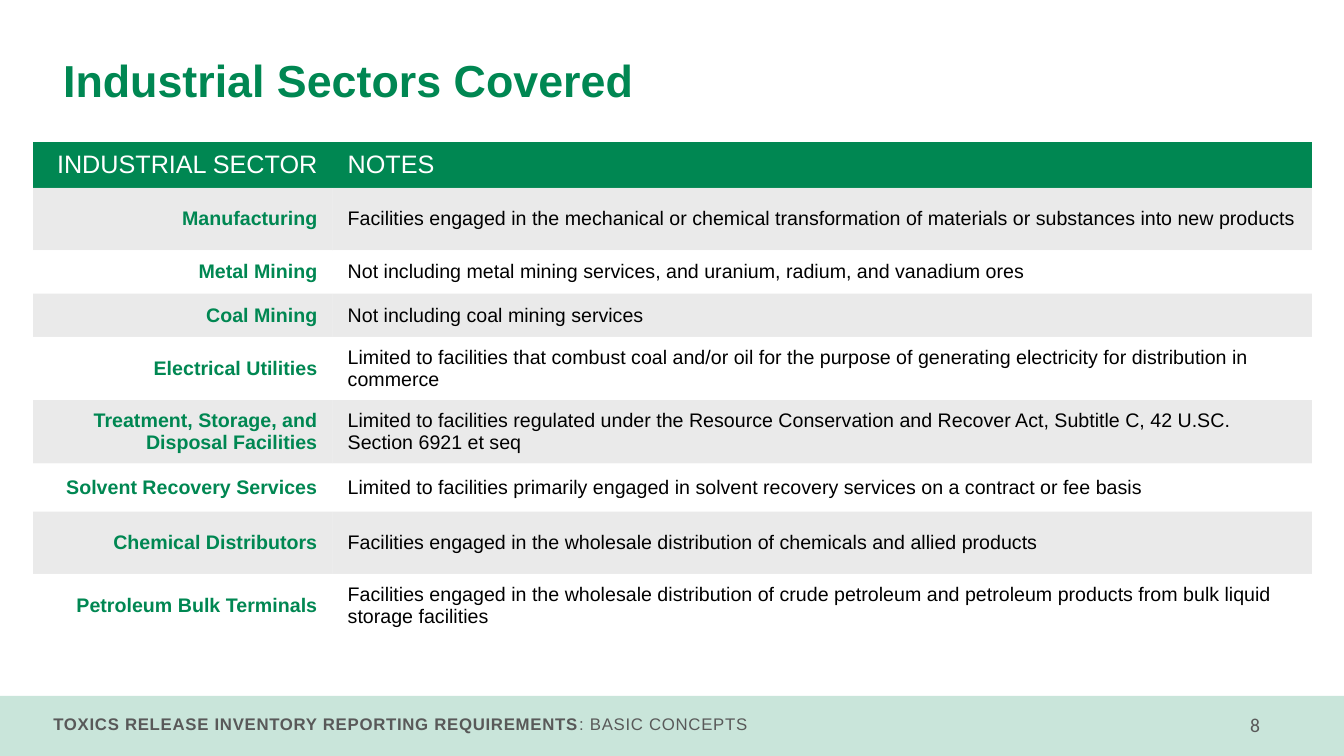
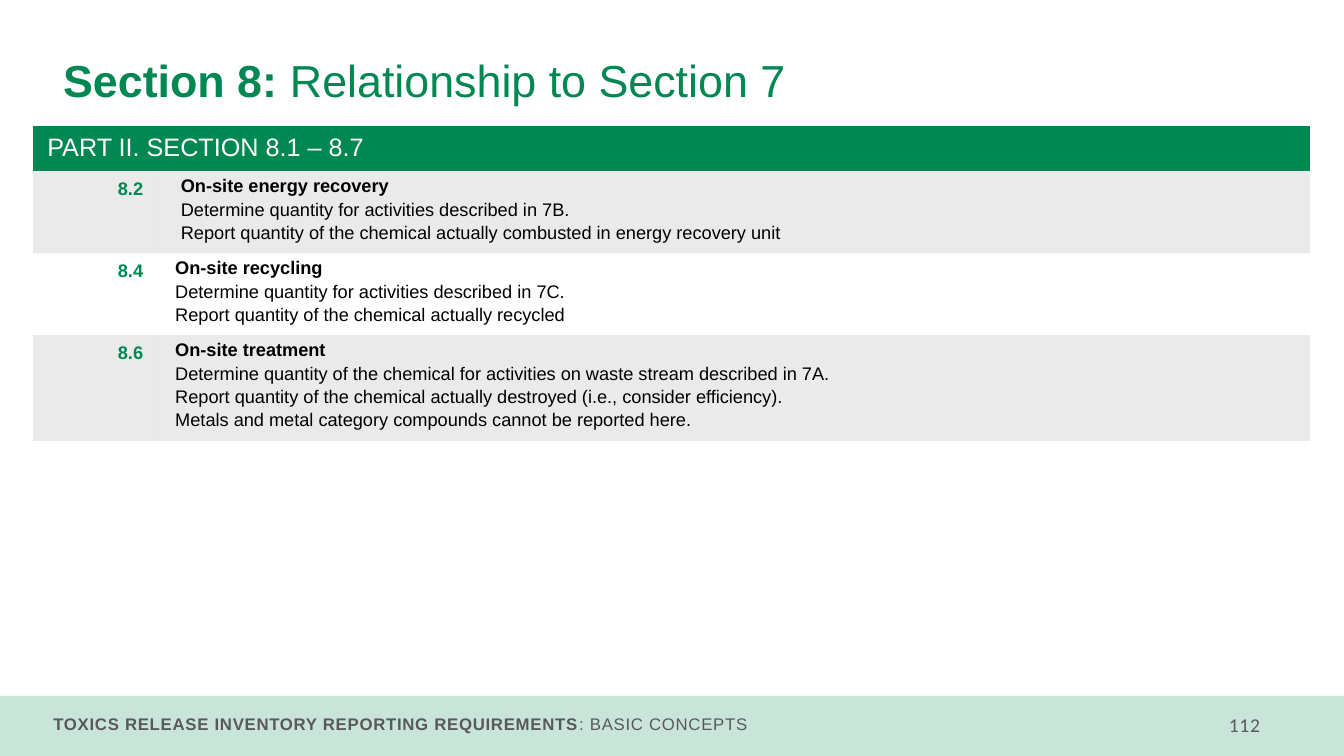
from dataclasses import dataclass

from lxml import etree
from pptx import Presentation
from pptx.dml.color import RGBColor
from pptx.enum.shapes import MSO_SHAPE
from pptx.enum.text import MSO_ANCHOR, PP_ALIGN
from pptx.oxml.ns import qn
from pptx.util import Pt

LEFT, RIGHT = PP_ALIGN.LEFT, PP_ALIGN.RIGHT
TOP, MIDDLE = MSO_ANCHOR.TOP, MSO_ANCHOR.MIDDLE
RECTANGLE = MSO_SHAPE.RECTANGLE

COLORS = {"green": "008752", "gray": "D9D9D9", "white": "FFFFFF",
          "black": "000000", "footer": "595959"}
SLIDE_W, SLIDE_H = 960, 540
PLAIN_TABLE_STYLE = "{2D5ABB26-0587-4C30-8999-92F81FD0307C}"
TABLE_LEFT = 23
WIDE_INSETS = (10.8, 5.76)
NARROW_INSETS = (7.2, 3.6)


@dataclass
class Run:
    text: str
    size: float
    color: str
    bold: bool = False
    font: str = "Arial"
    tracking: float = 0


@dataclass
class Paragraph:
    runs: list[Run]
    align: PP_ALIGN = LEFT
    indent: float = 0
    space_before: float = 0
    line_spacing: float = 1


@dataclass
class Cell:
    paragraphs: list[Paragraph]
    fill: str
    opacity: int = 100
    anchor: MSO_ANCHOR = MIDDLE
    insets: tuple[float, float] = WIDE_INSETS


@dataclass
class Sector:
    name: str
    notes: str
    height: float
    opacity: int


@dataclass
class Activity:
    number: str
    heading: str
    lines: list[str]
    height: float
    indent: float
    opacity: int


SECTORS = [
    Sector("Manufacturing", "Facilities engaged in the mechanical or chemical transformation of "
           "materials or substances into new products", 44.6, 55),
    Sector("Metal Mining", "Not including metal mining services, and uranium, radium, and "
           "vanadium ores", 31, 75),
    Sector("Coal Mining", "Not including coal mining services", 31, 55),
    Sector("Electrical Utilities", "Limited to facilities that combust coal and/or oil for the "
           "purpose of generating electricity for distribution in commerce", 44.6, 75),
    Sector("Treatment, Storage, and Disposal Facilities", "Limited to facilities regulated under "
           "the Resource Conservation and Recover Act, Subtitle C, 42 U.SC. Section 6921 et seq",
           44.6, 55),
    Sector("Solvent Recovery Services", "Limited to facilities primarily engaged in solvent "
           "recovery services on a contract or fee basis", 34.4, 55),
    Sector("Chemical Distributors", "Facilities engaged in the wholesale distribution of "
           "chemicals and allied products", 44.6, 55),
    Sector("Petroleum Bulk Terminals", "Facilities engaged in the wholesale distribution of crude "
           "petroleum and petroleum products from bulk liquid storage facilities", 44.6, 55),
]

ACTIVITIES = [
    Activity("8.2", "On-site energy recovery",
             ["Determine quantity for activities described in 7B.",
              "Report quantity of the chemical actually combusted in energy recovery unit"],
             56, 9, 55),
    Activity("8.4", "On-site recycling",
             ["Determine quantity for activities described in 7C.",
              "Report quantity of the chemical actually recycled"], 56, 5, 75),
    Activity("8.6", "On-site treatment",
             ["Determine quantity of the chemical for activities on waste stream described in 7A.",
              "Report quantity of the chemical actually destroyed (i.e., consider efficiency).",
              "Metals and metal category compounds cannot be reported here."], 73, 5, 55),
]


def paint(fill, properties, color: str, opacity: int) -> None:
    fill.solid()
    fill.fore_color.rgb = RGBColor.from_string(COLORS[color])
    if opacity < 100:
        tint = properties.find(qn("a:solidFill")).find(qn("a:srgbClr"))
        etree.SubElement(tint, qn("a:alpha"), val=str(opacity * 1000))


def write(frame, paragraphs: list[Paragraph]) -> None:
    for index, content in enumerate(paragraphs):
        paragraph = frame.add_paragraph() if index else frame.paragraphs[0]
        paragraph.alignment = content.align
        paragraph.line_spacing = content.line_spacing
        if index and content.space_before:
            paragraph.space_before = Pt(content.space_before)
        if content.indent:
            properties = paragraph._p.get_or_add_pPr()
            properties.set("marL", str(Pt(content.indent)))
            properties.set("indent", "0")
        for part in content.runs:
            run = paragraph.add_run()
            run.text = part.text
            run.font.size = Pt(part.size)
            run.font.name = part.font
            run.font.bold = part.bold
            run.font.color.rgb = RGBColor.from_string(COLORS[part.color])
            if part.tracking:
                run._r.get_or_add_rPr().set("spc", str(int(part.tracking * 100)))


def add_text(slide, box: tuple[float, float, float, float], paragraph: Paragraph,
             anchor: MSO_ANCHOR = TOP) -> None:
    frame = slide.shapes.add_textbox(*map(Pt, box)).text_frame
    frame.word_wrap = True
    frame.vertical_anchor = anchor
    write(frame, [paragraph])


def add_base(deck, title: list[Run], page: str):
    """Add a slide with its title, footer band and page number."""
    slide = deck.slides.add_slide(deck.slide_layouts[6])
    band = slide.shapes.add_shape(RECTANGLE, Pt(0), Pt(497), Pt(SLIDE_W), Pt(43))
    band.shadow.inherit = False
    band.line.fill.background()
    paint(band.fill, band._element.spPr, "green", 21)
    add_text(slide, (31, 506, 677, 22), Paragraph([
        Run("TOXICS RELEASE INVENTORY REPORTING REQUIREMENTS", 12, "footer", True, tracking=0.5),
        Run(": BASIC CONCEPTS", 12, "footer", tracking=0.5)]))
    add_text(slide, (811.4, 505.4, 95.8, 24.5), Paragraph(
        [Run(page, 14, "footer", font="Calibri", tracking=0.5)], RIGHT))
    add_text(slide, (38, 30.2, 869, 58.3), Paragraph(title, line_spacing=0.9), MIDDLE)
    return slide


def add_borders(cell, edges: dict[str, bool]) -> None:
    """Draw thin white lines on the outer edges of a cell."""
    properties = cell._tc.get_or_add_tcPr()
    outer = [tag for tag, is_outer in edges.items() if is_outer]
    for position, tag in enumerate(outer):
        line = etree.Element(qn(tag), w=str(Pt(1)))
        solid = etree.SubElement(line, qn("a:solidFill"))
        etree.SubElement(solid, qn("a:srgbClr"), val=COLORS["white"])
        properties.insert(position, line)


def add_grid(slide, top: float, widths: list[float], heights: list[float],
             rows: list[list[Cell]]) -> None:
    """Add a table; a row with a single cell spans every column."""
    table = slide.shapes.add_table(len(rows), len(widths), Pt(TABLE_LEFT), Pt(top),
                                   Pt(sum(widths)), Pt(sum(heights))).table
    table._tbl.tblPr.find(qn("a:tableStyleId")).text = PLAIN_TABLE_STYLE
    table.horz_banding = False
    for column, width in zip(table.columns, widths):
        column.width = Pt(width)
    last_row, last_column = len(rows) - 1, len(widths) - 1
    for y, (row, height) in enumerate(zip(rows, heights)):
        table.rows[y].height = Pt(height)
        if len(row) == 1:
            table.cell(y, 0).merge(table.cell(y, last_column))
        for x, content in enumerate(row):
            cell = table.cell(y, x)
            horizontal, vertical = content.insets
            cell.margin_left = cell.margin_right = Pt(horizontal)
            cell.margin_top = cell.margin_bottom = Pt(vertical)
            cell.vertical_anchor = content.anchor
            paint(cell.fill, cell._tc.get_or_add_tcPr(), content.fill, content.opacity)
            add_borders(cell, {"a:lnL": x == 0, "a:lnR": x == len(row) - 1,
                               "a:lnT": y == 0, "a:lnB": y == last_row})
            write(cell.text_frame, content.paragraphs)


def header(text: str, align: PP_ALIGN = LEFT) -> Cell:
    return Cell([Paragraph([Run(text, 18, "white")], align)], "green")


def stripe(index: int) -> str:
    return "white" if index % 2 else "gray"


def add_sectors_slide(deck) -> None:
    slide = add_base(deck, [Run("Industrial Sectors Covered", 32, "green", True)], "8")
    rows = [[header("INDUSTRIAL SECTOR", RIGHT), header("NOTES")]]
    for index, sector in enumerate(SECTORS):
        name = Paragraph([Run(sector.name, 14, "green", True)], RIGHT)
        notes = Paragraph([Run(sector.notes, 14, "black")])
        rows.append([Cell([part], stripe(index), sector.opacity) for part in (name, notes)])
    heights = [31] + [sector.height for sector in SECTORS]
    add_grid(slide, 101, [214.6, 699.8], heights, rows)


def add_relationship_slide(deck) -> None:
    slide = add_base(deck, [Run("Section 8: ", 32, "green", True),
                            Run("Relationship to Section 7", 32, "green")], "112")
    rows = [[header("PART II. SECTION 8.1 – 8.7")]]
    for index, activity in enumerate(ACTIVITIES):
        number = Paragraph([Run(activity.number, 13, "green", True)], RIGHT)
        details = [Paragraph([Run(text, 13, "black", position == 0)],
                             indent=activity.indent, space_before=2.2)
                   for position, text in enumerate([activity.heading, *activity.lines])]
        rows.append([Cell([number], stripe(index), activity.opacity, TOP),
                     Cell(details, stripe(index), activity.opacity, TOP, NARROW_INSETS)])
    heights = [31] + [activity.height for activity in ACTIVITIES]
    add_grid(slide, 89.3, [90, 823], heights, rows)


def main() -> None:
    deck = Presentation()
    deck.slide_width, deck.slide_height = Pt(SLIDE_W), Pt(SLIDE_H)
    add_sectors_slide(deck)
    add_relationship_slide(deck)
    deck.save("out.pptx")


if __name__ == "__main__":
    main()
